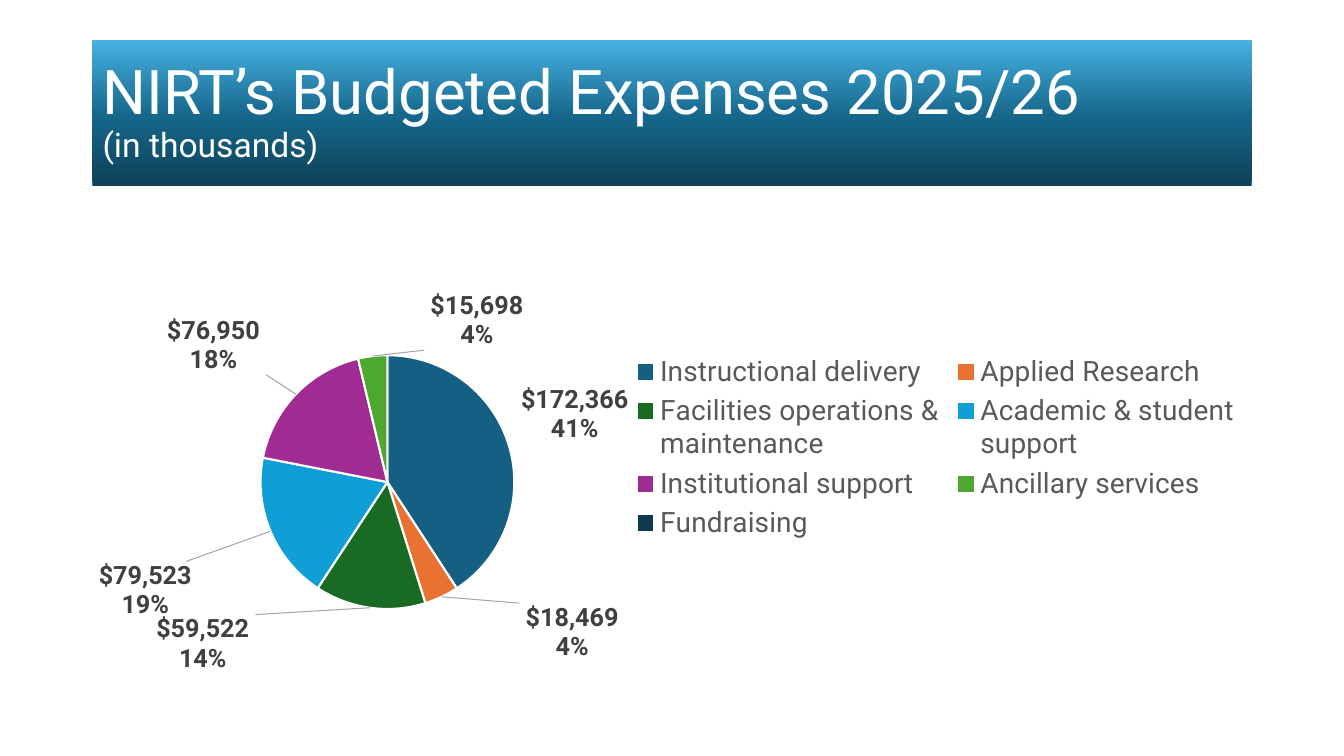
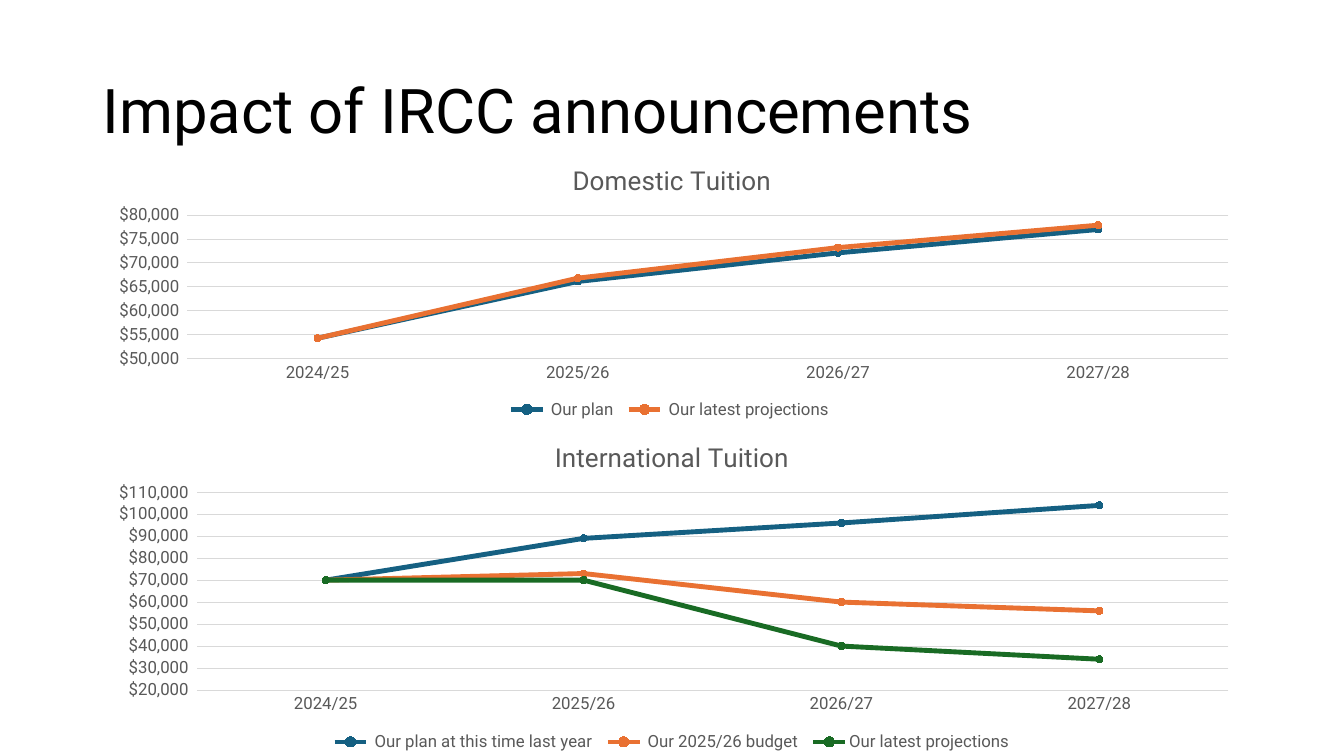
import copy

import lxml.etree
import pptx
import pptx.chart.data
import pptx.dml.color
import pptx.enum.chart
import pptx.enum.text
import pptx.oxml
import pptx.oxml.ns
import pptx.util
from pptx.util import Cm, Pt

FONT = "Roboto"
WHITE = pptx.dml.color.RGBColor(0xFF, 0xFF, 0xFF)
BLACK = pptx.dml.color.RGBColor(0x00, 0x00, 0x00)
CHART_TEXT = pptx.dml.color.RGBColor(0x59, 0x59, 0x59)
LABEL_TEXT = pptx.dml.color.RGBColor(0x40, 0x40, 0x40)
GRID = pptx.dml.color.RGBColor(0xD9, 0xD9, 0xD9)
BLUE = pptx.dml.color.RGBColor(0x15, 0x60, 0x82)
ORANGE = pptx.dml.color.RGBColor(0xE9, 0x71, 0x32)
GREEN = pptx.dml.color.RGBColor(0x19, 0x6B, 0x24)
SKY = pptx.dml.color.RGBColor(0x0F, 0x9E, 0xD5)
PURPLE = pptx.dml.color.RGBColor(0xA0, 0x2B, 0x93)
LIME = pptx.dml.color.RGBColor(0x4E, 0xA7, 0x2E)
NAVY = pptx.dml.color.RGBColor(0x0D, 0x3A, 0x4E)
ACCENTS = [BLUE, ORANGE, GREEN, SKY, PURPLE, LIME, NAVY]
BAND_STOPS = [
    (0, pptx.dml.color.RGBColor(0x0E, 0x40, 0x57)),
    (0.48, pptx.dml.color.RGBColor(0x16, 0x67, 0x8B)),
    (1, pptx.dml.color.RGBColor(0x46, 0xB1, 0xE1)),
]

TITLE_BOX = (Cm(2.33), Cm(1.01), Cm(29.21), Cm(3.68))
PIE_BOX = (Cm(2.33), Cm(5.23), Cm(29.21), Cm(12.09))
DOMESTIC_BOX = (Cm(2.33), Cm(3.73), Cm(29.21), Cm(6.94))
INTERNATIONAL_BOX = (Cm(2.33), Cm(10.67), Cm(29.21), Cm(8.38))

DOLLARS = '_("$"* #,##0_);_("$"* \\(#,##0\\);_("$"* "-"_);_(@_)'
YEARS = ["2024/25", "2025/26", "2026/27", "2027/28"]
EXPENSES = {
    "Instructional delivery": 172366,
    "Applied Research": 18469,
    "Facilities operations & maintenance": 59522,
    "Academic & student support": 79523,
    "Institutional support": 76950,
    "Ancillary services": 15698,
    "Fundraising": None,
}
LABEL_SHIFTS = {1: (6.5, 0.2), 2: (-9.8, 0.2), 3: (-6.8, 5.8), 4: (-2.2, -3.2), 5: (13.6, 0)}
DOMESTIC = {
    " Our plan ": [54200, 66100, 72100, 77000],
    " Our latest projections ": [54200, 66800, 73200, 77900],
}
INTERNATIONAL = {
    " Our plan at this time last year ": [70000, 89000, 96000, 104000],
    " Our 2025/26 budget ": [70000, 73000, 60000, 56000],
    "Our latest projections": [70000, 70000, 40000, 34000],
}


def style_font(font, size, color, bold=False):
    """Apply the shared typeface with a size, colour and weight."""
    font.name = FONT
    font.size = Pt(size)
    font.bold = bold
    font.color.rgb = color


def add_title(slide, lines, color):
    """Fill the title placeholder with lines of text and sizes."""
    shape = slide.shapes.title
    shape.left, shape.top, shape.width, shape.height = TITLE_BOX
    frame = shape.text_frame
    frame.word_wrap = True
    frame.auto_size = pptx.enum.text.MSO_AUTO_SIZE.NONE
    frame.vertical_anchor = pptx.enum.text.MSO_ANCHOR.MIDDLE
    paragraph = frame.paragraphs[0]
    paragraph.alignment = pptx.enum.text.PP_ALIGN.LEFT
    paragraph.line_spacing = 0.9
    for index, (text, size) in enumerate(lines):
        if index:
            paragraph.add_line_break()
        run = paragraph.add_run()
        run.text = text
        style_font(run.font, size, color)
    return shape


def fill_band(shape):
    """Give a shape the three-stop vertical gradient."""
    shape.fill.gradient()
    shape.fill.gradient_angle = 90
    first = shape.element.find(".//" + pptx.oxml.ns.qn("a:gs"))
    first.addnext(copy.deepcopy(first))
    for stop, (position, color) in zip(shape.fill.gradient_stops, BAND_STOPS):
        stop.position = position
        stop.color.rgb = color


def layout_xml(inner=False, **percents):
    """Build a manual chart layout from percentages of the chart box."""
    parts = ['<c:layoutTarget val="inner"/>'] if inner else []
    if "w" in percents:
        parts += ['<c:xMode val="edge"/>', '<c:yMode val="edge"/>']
    parts += [f'<c:{key} val="{value / 100:.3f}"/>' for key, value in percents.items()]
    namespace = pptx.oxml.ns.nsdecls("c")
    return pptx.oxml.parse_xml(
        f'<c:layout {namespace}><c:manualLayout>{"".join(parts)}</c:manualLayout></c:layout>'
    )


def place_plot(chart, **percents):
    """Set the inner plot area inside the chart box."""
    area = chart.element.find(".//" + pptx.oxml.ns.qn("c:plotArea"))
    for old in area.findall(pptx.oxml.ns.qn("c:layout")):
        area.remove(old)
    area.insert(0, layout_xml(inner=True, **percents))


def add_chart(slide, kind, box, categories, series, legend_position, legend_size):
    """Add a chart with the shared font and legend style."""
    data = pptx.chart.data.CategoryChartData(number_format=DOLLARS)
    data.categories = categories
    for name, values in series.items():
        data.add_series(name, values)
    chart = slide.shapes.add_chart(kind, *box, data).chart
    style_font(chart.font, 10, BLACK)
    chart.has_legend = True
    chart.legend.position = legend_position
    chart.legend.include_in_layout = False
    style_font(chart.legend.font, legend_size, CHART_TEXT)
    return chart


def shift_labels(chart):
    """Move single pie labels away from the pie and draw leader lines."""
    qn = pptx.oxml.ns.qn
    namespaces = pptx.oxml.ns.nsdecls("c", "a")
    labels = chart.element.find(".//" + qn("c:ser")).find(qn("c:dLbls"))
    separator = lxml.etree.Element(qn("c:separator"))
    separator.text = "\n"
    labels.find(qn("c:showBubbleSize")).addnext(separator)
    shared = [child for child in labels if child.tag not in (qn("c:showLeaderLines"), qn("c:leaderLines"))]
    for position, (index, (x, y)) in enumerate(LABEL_SHIFTS.items()):
        label = pptx.oxml.parse_xml(f'<c:dLbl {namespaces}><c:idx val="{index}"/></c:dLbl>')
        label.append(layout_xml(x=x, y=y))
        label.extend(copy.deepcopy(child) for child in shared)
        labels.insert(position, label)
    for old in labels.findall(qn("c:showLeaderLines")):
        labels.remove(old)
    labels.append(pptx.oxml.parse_xml(f'<c:showLeaderLines {namespaces} val="1"/>'))
    labels.append(pptx.oxml.parse_xml(
        f'<c:leaderLines {namespaces}><c:spPr><a:ln w="9525"><a:solidFill>'
        '<a:srgbClr val="A6A6A6"/></a:solidFill></a:ln></c:spPr></c:leaderLines>'
    ))


def add_expense_pie(slide, box):
    """Add the expense pie with its labels and legend."""
    chart = add_chart(
        slide, pptx.enum.chart.XL_CHART_TYPE.PIE, box, list(EXPENSES),
        {"Series 1": list(EXPENSES.values())}, pptx.enum.chart.XL_LEGEND_POSITION.RIGHT, 20,
    )
    chart.has_title = False
    plot = chart.plots[0]
    plot.vary_by_categories = True
    series = plot.series[0]
    for index, color in enumerate(ACCENTS):
        point_format = series.points[index].format
        point_format.fill.solid()
        point_format.fill.fore_color.rgb = color
        point_format.line.color.rgb = WHITE
        point_format.line.width = Pt(1.5)
    labels = series.data_labels
    labels.show_value = True
    labels.show_percentage = True
    labels.position = pptx.enum.chart.XL_LABEL_POSITION.OUTSIDE_END
    style_font(labels.font, 18, LABEL_TEXT, bold=True)
    shift_labels(chart)
    place_plot(chart, x=14.5, y=30.8, w=21.9, h=52.9)


def add_tuition_chart(slide, box, title, series, scale, plot_box):
    """Add a titled line chart of tuition by year."""
    chart = add_chart(
        slide, pptx.enum.chart.XL_CHART_TYPE.LINE_MARKERS, box, YEARS, series,
        pptx.enum.chart.XL_LEGEND_POSITION.BOTTOM, 12,
    )
    chart.has_title = True
    run = chart.chart_title.text_frame.paragraphs[0].add_run()
    run.text = title
    style_font(run.font, 18.6, CHART_TEXT)
    chart.chart_title.include_in_layout = False
    for axis in (chart.category_axis, chart.value_axis):
        axis.major_tick_mark = pptx.enum.chart.XL_TICK_MARK.NONE
        axis.minor_tick_mark = pptx.enum.chart.XL_TICK_MARK.NONE
        style_font(axis.tick_labels.font, 12, CHART_TEXT)
    axis = chart.value_axis
    axis.minimum_scale, axis.maximum_scale, axis.major_unit = scale
    axis.tick_labels.number_format = DOLLARS
    axis.tick_labels.number_format_is_linked = False
    axis.format.line.fill.background()
    axis.has_major_gridlines = True
    for line in (chart.category_axis.format.line, axis.major_gridlines.format.line):
        line.color.rgb = GRID
        line.width = Pt(0.75)
    plot = chart.plots[0]
    plot.vary_by_categories = False
    for line_series, color in zip(plot.series, ACCENTS):
        line_series.smooth = False
        line_series.format.line.color.rgb = color
        line_series.format.line.width = Pt(3.5)
        marker = line_series.marker
        marker.style = pptx.enum.chart.XL_MARKER_STYLE.CIRCLE
        marker.size = 5
        marker.format.fill.solid()
        marker.format.fill.fore_color.rgb = color
        marker.format.line.color.rgb = color
    place_plot(chart, **plot_box)


def build_expenses(slide):
    """Build the slide of budgeted expenses."""
    lines = [("NIRT’s Budgeted Expenses 2025/26", 44), ("(in thousands)", 24)]
    fill_band(add_title(slide, lines, WHITE))
    add_expense_pie(slide, PIE_BOX)


def build_tuition(slide):
    """Build the slide of the two tuition charts."""
    add_title(slide, [("Impact of IRCC announcements", 44)], BLACK)
    add_tuition_chart(
        slide, INTERNATIONAL_BOX, "International Tuition", INTERNATIONAL,
        (20000, 110000, 10000), {"x": 9, "y": 20.7, "w": 89, "h": 59.5},
    )
    add_tuition_chart(
        slide, DOMESTIC_BOX, "Domestic Tuition", DOMESTIC,
        (50000, 80000, 5000), {"x": 8.2, "y": 24.4, "w": 89.8, "h": 52},
    )


def main():
    """Build and save the presentation."""
    presentation = pptx.Presentation()
    presentation.slide_width = Cm(33.87)
    presentation.slide_height = Cm(19.05)
    for build in (build_expenses, build_tuition):
        build(presentation.slides.add_slide(presentation.slide_layouts[5]))
    presentation.save("out.pptx")


if __name__ == "__main__":
    main()
